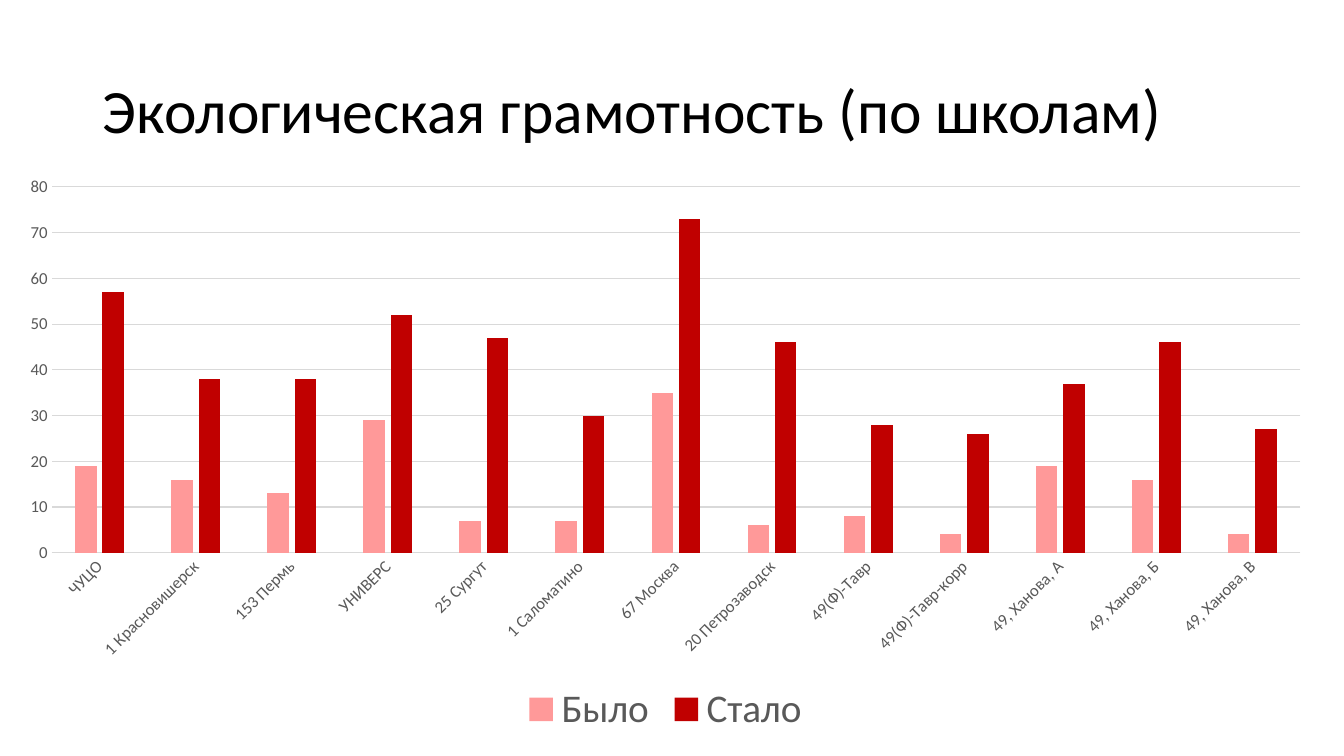
import pptx
import pptx.chart.data
import pptx.dml.color
import pptx.enum.chart
import pptx.enum.text
import pptx.util

Inches = pptx.util.Inches
Pt = pptx.util.Pt

FONT = "Calibri"
COLORS = {
    "title": "000000",
    "label": "595959",
    "grid": "D9D9D9",
    "before": "FF9999",
    "after": "C00000",
}
SCHOOLS = [
    "ЧУЦО", "1 Красновишерск", "153 Пермь", "УНИВЕРС", "25 Сургут",
    "1 Саломатино", "67 Москва", "20 Петрозаводск", "49(Ф)-Тавр",
    "49(Ф)-Тавр-корр", "49, Ханова, А", "49, Ханова, Б", "49, Ханова, В",
]
RESULTS = [
    ("Было", "before", [19, 16, 13, 29, 7, 7, 35, 6, 8, 4, 19, 16, 4]),
    ("Стало", "after", [57, 38, 38, 52, 47, 30, 73, 46, 28, 26, 37, 46, 27]),
]


def rgb(name):
    return pptx.dml.color.RGBColor.from_string(COLORS[name])


def style_font(font, size, color):
    font.name = FONT
    font.size = Pt(size)
    font.bold = False
    font.color.rgb = rgb(color)


def style_line(line):
    line.color.rgb = rgb("grid")
    line.width = Pt(0.75)


def style_axis(axis):
    axis.major_tick_mark = pptx.enum.chart.XL_TICK_MARK.NONE
    axis.minor_tick_mark = pptx.enum.chart.XL_TICK_MARK.NONE
    style_font(axis.tick_labels.font, 12, "label")


def set_title(slide, text):
    sp = slide.shapes.title
    sp.left, sp.top = Inches(0.92), Inches(0.4)
    sp.width, sp.height = Inches(11.5), Inches(1.45)
    tf = sp.text_frame
    tf.text = text
    tf.word_wrap = True
    tf.vertical_anchor = pptx.enum.text.MSO_ANCHOR.MIDDLE
    p = tf.paragraphs[0]
    p.alignment = pptx.enum.text.PP_ALIGN.LEFT
    p.line_spacing = 0.9
    style_font(p.runs[0].font, 44, "title")


def add_results_chart(slide):
    data = pptx.chart.data.CategoryChartData()
    data.categories = SCHOOLS
    for name, _, values in RESULTS:
        data.add_series(name, values)
    chart = slide.shapes.add_chart(
        pptx.enum.chart.XL_CHART_TYPE.COLUMN_CLUSTERED,
        Inches(0.04), Inches(1.64), Inches(13.12), Inches(5.71), data,
    ).chart
    style_font(chart.font, 10, "title")
    chart.has_title = False

    plot = chart.plots[0]
    plot.gap_width = 219
    plot.overlap = -27
    plot.vary_by_categories = False
    for series, (_, color, _) in zip(plot.series, RESULTS):
        series.format.fill.solid()
        series.format.fill.fore_color.rgb = rgb(color)

    schools, scores = chart.category_axis, chart.value_axis
    for axis in (schools, scores):
        style_axis(axis)
    style_line(schools.format.line)
    schools._element.txPr.bodyPr.set("rot", "-2700000")
    scores.format.line.fill.background()
    scores.minimum_scale, scores.maximum_scale = 0, 80
    scores.major_unit = 10
    scores.has_major_gridlines = True
    style_line(scores.major_gridlines.format.line)

    chart.has_legend = True
    chart.legend.position = pptx.enum.chart.XL_LEGEND_POSITION.BOTTOM
    chart.legend.include_in_layout = False
    style_font(chart.legend.font, 28, "label")


def main():
    prs = pptx.Presentation()
    prs.slide_width, prs.slide_height = Inches(13.33), Inches(7.5)
    slide = prs.slides.add_slide(prs.slide_layouts[5])
    set_title(slide, "Экологическая грамотность (по школам)")
    add_results_chart(slide)
    prs.save("out.pptx")


if __name__ == "__main__":
    main()
